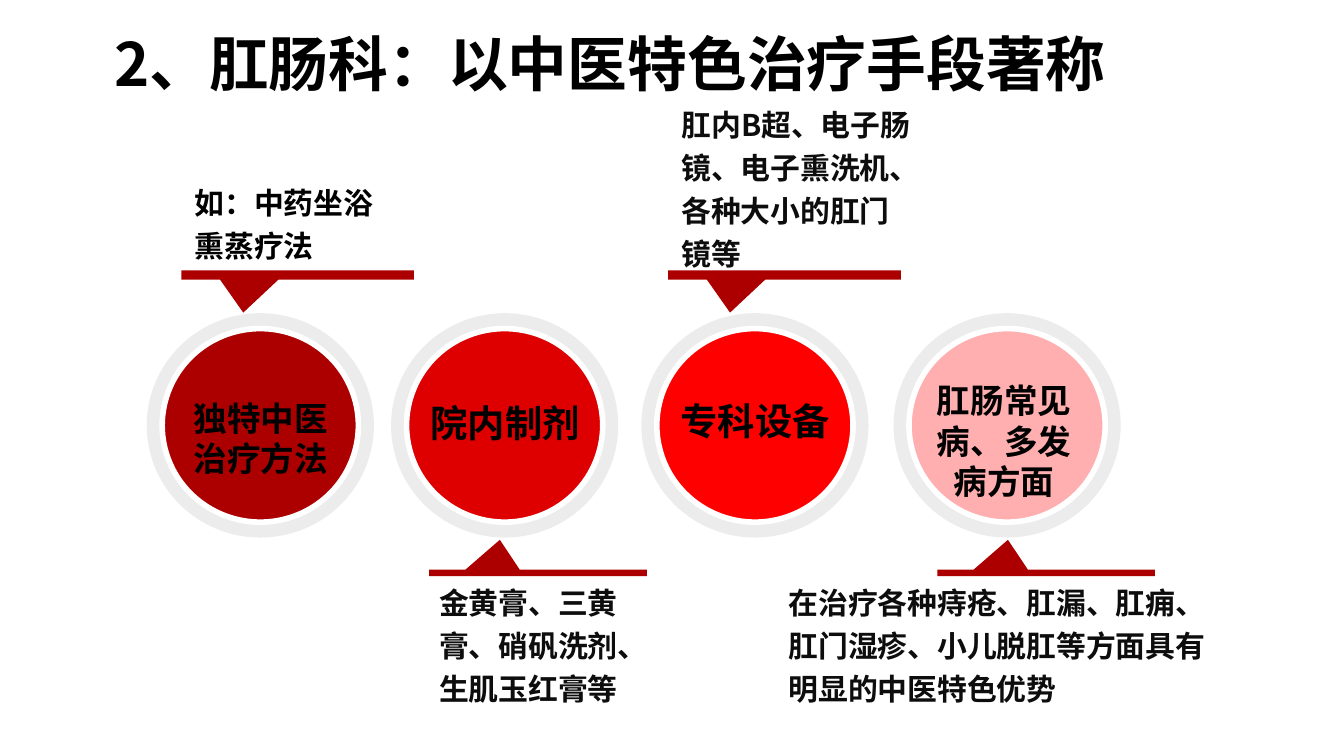
from pptx import Presentation
from pptx.dml.color import RGBColor
from pptx.enum.shapes import MSO_SHAPE as Preset
from pptx.enum.text import MSO_AUTO_SIZE as AutoSize, MSO_ANCHOR as Anchor, PP_ALIGN as Align
from pptx.oxml.ns import qn
from pptx.util import Pt
from lxml.etree import SubElement

FONT = "Noto Sans CJK SC"
COLORS = {
    "black": "000000", "ink": "0D0D0D", "white": "FFFFFF", "ring": "D8D8D8",
    "dark": "AC0000", "deep": "DE0000", "bright": "FF0000", "pink": "FFAFAF",
}
RING_TOP, RING_SIZE = 167.8, (121.7, 120.2)
DISC_SIZE = (105.1, 103.7)

# Ring left, disc colour, label box (left, top, width), label size, label lines
CIRCLES = [
    (209.5, "deep", (203.8, 211, 133.9), 20, ["院内制剂"]),
    (343.6, "bright", (337.7, 209.5, 133.9), 20, ["专科设备"]),
    (478.7, "pink", (486.8, 200.2, 102.2), 18, ["肛肠常见病、多发病方面"]),
    (78.6, "dark", (72.7, 209.5, 133.9), 18, ["独特中医", "治疗方法"]),
]

# Pointer left, points down, note box (left, top, width, height), colour, text
NOTES = [
    (229.9, False, (228.2, 306, 115.9, 77), "ink", "金黄膏、三黄膏、硝矾洗剂、生肌玉红膏等"),
    (97.2, True, (97.2, 91.4, 115.9, 54), "black", "如：中药坐浴熏蒸疗法"),
    (358, True, (358, 49.7, 140.4, 100), "ink",
     "肛内B超、电子肠镜、电子熏洗机、各种大小的肛门镜等"),
    (502.1, False, (415.4, 306, 244.1, 77), "ink",
     "在治疗各种痔疮、肛漏、肛痈、肛门湿疹、小儿脱肛等方面具有明显的中医特色优势"),
]


def rgb(name):
    return RGBColor.from_string(COLORS[name])


def add_text(shapes, area, lines, size, color="black", align=Align.LEFT,
             spacing=None, grow=False, inset=7.2):
    box = shapes.add_textbox(*map(Pt, area))
    frame = box.text_frame
    frame.word_wrap = True
    frame.auto_size = AutoSize.SHAPE_TO_FIT_TEXT if grow else AutoSize.NONE
    frame.vertical_anchor = Anchor.TOP
    frame.margin_left = Pt(inset)
    for index, line in enumerate(lines):
        para = frame.paragraphs[0] if index == 0 else frame.add_paragraph()
        para.alignment = align
        if spacing:
            para.line_spacing = spacing
        span = para.add_run()
        span.text = line
        font = span.font
        font.name, font.size, font.bold = FONT, Pt(size), True
        font.color.rgb = rgb(color)
        # East Asian glyphs take their own typeface entry
        SubElement(font._element, qn("a:ea"), typeface=FONT)


def add_solid(shapes, preset, area, color, opacity=None, outline=None):
    shape = shapes.add_shape(preset, *map(Pt, area))
    shape.shadow.inherit = False
    shape.fill.solid()
    shape.fill.fore_color.rgb = rgb(color)
    if opacity:
        tint = shape._element.spPr.find(qn("a:solidFill"))[0]
        SubElement(tint, qn("a:alpha"), val=str(opacity * 1000))
    if outline:
        shape.line.color.rgb = rgb(outline)
        shape.line.width = Pt(3)
    else:
        shape.line.fill.background()
    return shape


def add_circle(page, left, color, label, size, lines):
    shapes = page.shapes.add_group_shape().shapes
    add_solid(shapes, Preset.OVAL, (left, RING_TOP, *RING_SIZE), "ring", opacity=48)
    # The disc sits in the centre of its ring
    inset_x, inset_y = ((r - d) / 2 for r, d in zip(RING_SIZE, DISC_SIZE))
    add_solid(shapes, Preset.OVAL, (left + inset_x, RING_TOP + inset_y, *DISC_SIZE),
              color, outline="white")
    add_text(shapes, (*label, 42.5), lines, size, align=Align.CENTER)


def add_pointer(page, left, down):
    top, width, height, tip = (
        (144.9, 124.6, 5, (-0.234, 4.033)) if down
        else (305.2, 116.6, 3.5, (-0.175, -5.095)))
    bar = add_solid(page.shapes, Preset.RECTANGULAR_CALLOUT,
                    (left, top, width, height), "dark")
    bar.adjustments[0], bar.adjustments[1] = tip


def main():
    deck = Presentation()
    deck.slide_width, deck.slide_height = Pt(720), Pt(405)
    page = deck.slides.add_slide(deck.slide_layouts[6])

    # Title
    add_text(page.shapes, (46.8, 10.8, 629.3, 46), ["2、肛肠科：以中医特色治疗手段著称"],
             32, grow=True, inset=14.4)

    # Row of circles
    for circle in CIRCLES:
        add_circle(page, *circle)

    # Pointers with their notes
    for left, down, area, color, text in NOTES:
        add_pointer(page, left, down)
        add_text(page.shapes, area, [text], 16, color, spacing=1.2, grow=True)

    deck.save("out.pptx")


if __name__ == "__main__":
    main()
